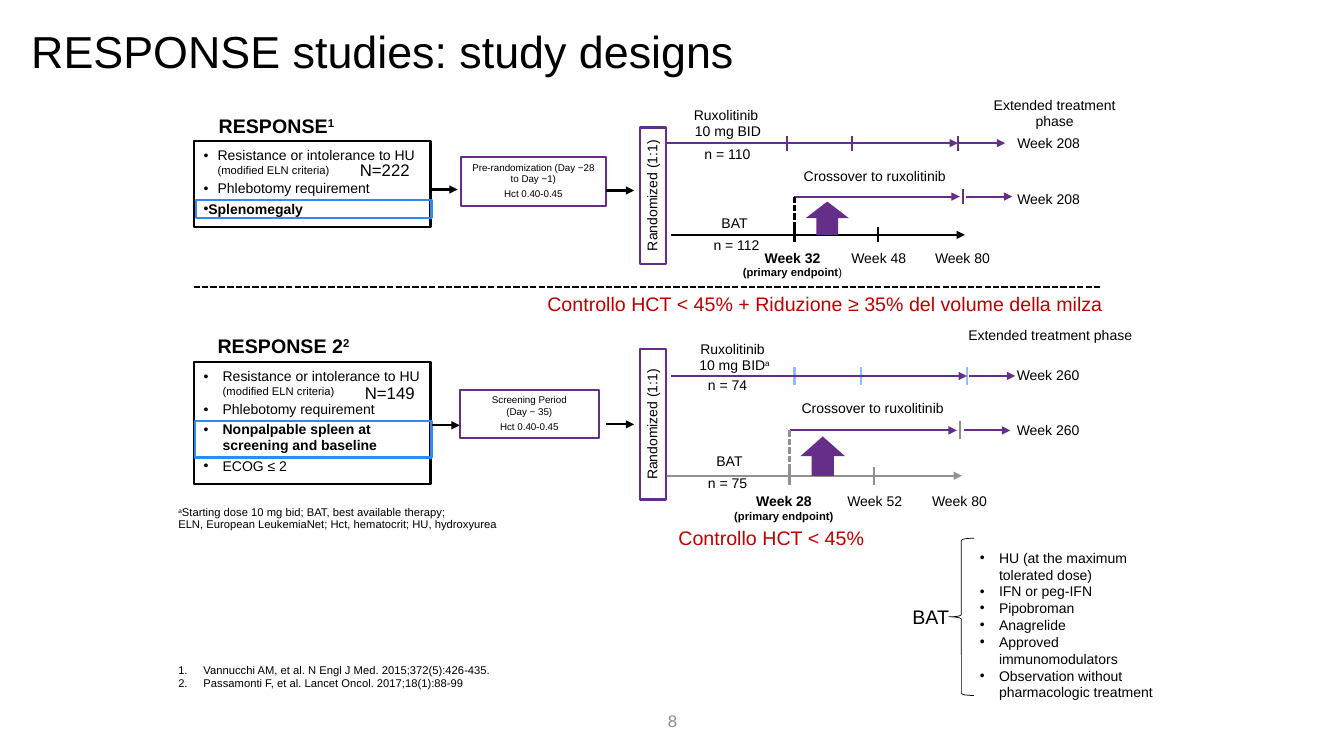
from dataclasses import dataclass, field
from lxml.etree import SubElement
from pptx import Presentation
from pptx.dml.color import RGBColor
from pptx.enum.dml import MSO_LINE
from pptx.enum.shapes import MSO_CONNECTOR, MSO_SHAPE
from pptx.enum.text import MSO_ANCHOR, MSO_AUTO_SIZE, PP_ALIGN
from pptx.oxml.ns import qn
from pptx.util import Inches, Pt

TITLE = "RESPONSE studies: study designs"
PAGE = "8"

RESPONSE = dict(
    heading=[("RESPONSE", "heading"), ("1", "heading_sup")], heading_at=(20.7, 10.8),
    criteria=[
        [("Resistance or intolerance to HU ", "label"), ("(modified ELN criteria)", "small")],
        [("Phlebotomy requirement", "label")],
        [("Splenomegaly", "strong")],
    ],
    criteria_box=(19.2, 14, 23.5, 8.5), margins=[0.14, 0.14, 0], hanging=0.14,
    highlight=(19.4, 19.8, 23.4, 1.8),
    enrolled="N=222", enrolled_at=(34.7, 15.4),
    screening=["Pre-randomization (Day −28 to Day −1)", "Hct 0.40-0.45"],
    screening_box=(45.7, 15.6, 14.4, 4.8),
    steps=[(42.7, 45.4, 18.8), (60.1, 62.9, 18.9)],
    randomized=(64.75, 19.4, 13.5),
    tick=0.75,
    tracks=[
        dict(row=14.2, span=(65.9, 95), ink="purple", ticks=[78.1, 84.5, 95], tick_ink="purple", extension=(95.1, 99.7)),
        dict(row=19.5, span=(78.8, 95.2), ink="purple", ticks=[95.5], tick_ink="purple", extension=(95.8, 100.4)),
        dict(row=23.3, span=(66.6, 95.7), ink="black", ticks=[78.8, 87.1], tick_ink="black"),
    ],
    drop=(78.8, 19.5, 22.5), drop_ink="black",
    crossover=(79.9, 20, 4.3, 3.3),
    labels=[
        ([("Ruxolitinib \n10 mg BID", "label")], (65.9, 10.2, 12.6)),
        ([("n = 110", "label")], (68.8, 14.1, 6.7)),
        ([("Extended treatment phase", "label")], (95.6, 9.2, 18)),
        ([("Week 208", "label")], (99.2, 13, 9.6)),
        ([("Crossover to ruxolitinib", "label")], (76.2, 16.3, 21.1)),
        ([("Week 208", "label")], (99.2, 18.5, 9.6)),
        ([("BAT", "label")], (65, 20.9, 15.7)),
        ([("n = 112", "label")], (69.7, 23.1, 6.7)),
        ([("Week 48", "label")], (83.4, 24.4, 7.5)),
        ([("Week 80", "label")], (91.7, 24.4, 7.5)),
    ],
    endpoint=[("Week 32\n", "strong"), ("(primary endpoint", "small_strong"), (")", "small")],
    endpoint_at=(67.5, 24.5, 22.2, 3.7), endpoint_spacing=0.9,
    finding="Controllo HCT < 45% + Riduzione ≥ 35% del volume della milza",
    finding_at=(53.3, 28.5, 59.1),
)
RESPONSE_2 = dict(
    heading=[("RESPONSE 2", "heading"), ("2", "heading_sup")], heading_at=(20.6, 32.6),
    criteria=[
        [("Resistance or intolerance to HU ", "label"), ("(modified ELN criteria)", "small")],
        [("Phlebotomy requirement", "label")],
        [("Nonpalpable spleen at screening and baseline", "strong")],
        [("ECOG ≤ 2", "label")],
    ],
    criteria_box=(19.2, 35.9, 23.5, 12.1), margins=[0.19] * 4, hanging=0.19,
    highlight=(19.3, 41.8, 23.5, 3.6),
    enrolled="N=149", enrolled_at=(35.2, 37.5),
    screening=["Screening Period\n(Day − 35)", "Hct 0.40-0.45"],
    screening_box=(45.6, 38.7, 13.8, 4.8),
    steps=[(42.8, 45.6, 42.2), (60.1, 62.9, 42.1)],
    randomized=(64.75, 42.1, 14.9),
    tick=0.9,
    tracks=[
        dict(row=37.3, span=(66.6, 95.9), ink="purple", ticks=[78.8, 85.4, 95.9], tick_ink="sky", extension=(96.1, 100.7)),
        dict(row=42.7, span=(78.4, 94.9), ink="purple", ticks=[95.2], tick_ink="grey", extension=(95.6, 100.2)),
        dict(row=47.2, span=(66, 95.4), ink="grey", ticks=[78.3, 86.7], tick_ink="grey"),
    ],
    drop=(78.3, 42.7, 46.3), drop_ink="grey",
    crossover=(79.4, 43.3, 4.4, 3.9),
    labels=[
        ([("Ruxolitinib \n10 mg BID", "label"), ("a", "label_sup")], (66.5, 33.4, 12.7)),
        ([("n = 74", "label")], (69.2, 37, 5.9)),
        ([("Extended treatment phase", "label")], (94.9, 32, 18.5)),
        ([("Week 260", "label")], (99.1, 36, 9.7)),
        ([("Crossover to ruxolitinib", "label")], (75.9, 39.3, 21.3)),
        ([("Week 260", "label")], (99.1, 41.4, 9.7)),
        ([("BAT", "label")], (64.4, 44.5, 15.9)),
        ([("n = 75", "label")], (69.2, 46.7, 5.9)),
        ([("Week 52", "label")], (83, 48.5, 7.5)),
        ([("Week 80", "label")], (91.4, 48.5, 7.5)),
    ],
    endpoint=[("Week 28\n", "strong"), ("(primary endpoint)", "small_strong")],
    endpoint_at=(66.5, 48.4, 22.5, 4), endpoint_spacing=1,
    finding="Controllo HCT < 45%", finding_at=(66.3, 51.7, 25.6),
)
FOOTNOTE = [
    ("a", "small_sup"),
    ("Starting dose 10 mg bid; BAT, best available therapy; \nELN, European LeukemiaNet; Hct, hematocrit; HU, hydroxyurea", "small"),
]
THERAPIES = [
    "HU (at the maximum tolerated dose)", "IFN or peg-IFN", "Pipobroman", "Anagrelide",
    "Approved immunomodulators", "Observation without pharmacologic treatment",
]
REFERENCES = [
    "Vannucchi AM, et al. N Engl J Med. 2015;372(5):426-435.",
    "Passamonti F, et al. Lancet Oncol. 2017;18(1):88-99",
]


@dataclass
class Theme:
    font: str = "Arial"
    stroke: float = 1.5
    inks: dict = field(default_factory=lambda: dict(
        black="000000", white="FFFFFF", purple="652E88", grey="919191", sky="8BBEFA",
        blue="2E8AF6", red="C00000", page="8C8C8C"))
    roles: dict = field(default_factory=lambda: dict(
        title=(32, False, "black"), heading=(14, True, "black"), heading_sup=(14, True, "black"),
        finding=(14, False, "red"), group=(14, False, "black"), count=(12, False, "black"),
        page=(12, False, "page"), label=(10, False, "black"), label_sup=(10, False, "black"),
        strong=(10, True, "black"), small=(8, False, "black"), small_sup=(8, False, "black"),
        small_strong=(8, True, "black"), tiny=(7, False, "black")))

    def color(self, ink):
        return RGBColor.from_string(self.inks[ink])


theme = Theme()
deck = Presentation()
deck.slide_width, deck.slide_height = Inches(13.33), Inches(7.5)
slide = deck.slides.add_slide(deck.slide_layouts[5])


def cells(*counts):
    return [Inches(count / 10) for count in counts]


def bullet(paragraph, margin, hanging, numbered=False):
    props = paragraph._p.get_or_add_pPr()
    props.set("marL", str(Inches(margin)))
    props.set("indent", str(-Inches(hanging)))
    tint = SubElement(props, qn("a:buClr"))
    SubElement(tint, qn("a:srgbClr"), val=theme.inks["black"])
    SubElement(props, qn("a:buFont"), typeface=theme.font)
    if numbered:
        SubElement(props, qn("a:buAutoNum"), type="arabicPeriod")
    else:
        SubElement(props, qn("a:buChar"), char="•")


def write(frame, paragraphs, align=PP_ALIGN.LEFT, spacing=1, after=0, margins=None, hanging=0,
          numbered=False, anchor=MSO_ANCHOR.TOP, wrap=True):
    frame.word_wrap, frame.vertical_anchor, frame.auto_size = wrap, anchor, MSO_AUTO_SIZE.NONE
    for index, runs in enumerate(paragraphs):
        paragraph = frame.add_paragraph() if index else frame.paragraphs[0]
        if margins:
            bullet(paragraph, margins[index], hanging, numbered)
        paragraph.alignment, paragraph.line_spacing = align, spacing
        paragraph.space_after = Pt(after)
        for text, role in runs:
            size, bold, ink = theme.roles[role]
            for part, words in enumerate(text.split("\n")):
                if part:
                    paragraph.add_line_break()
                if words:
                    run = paragraph.add_run()
                    run.text = words
                    run.font.name, run.font.size, run.font.bold = theme.font, Pt(size), bold
                    run.font.color.rgb = theme.color(ink)
                    if role.endswith("_sup"):
                        run._r.get_or_add_rPr().set("baseline", "30000")


def note(box, paragraphs, **layout):
    write(slide.shapes.add_textbox(*cells(*box)).text_frame, paragraphs, **layout)


def block(box, preset=MSO_SHAPE.RECTANGLE, fill=None, line=None, width=theme.stroke):
    shape = slide.shapes.add_shape(preset, *cells(*box))
    shape.shadow.inherit = False
    for paint, ink in ((shape.fill, fill), (shape.line.fill, line)):
        if ink:
            paint.solid()
            paint.fore_color.rgb = theme.color(ink)
        else:
            paint.background()
    if line:
        shape.line.width = Pt(width)
    return shape


def rule(x1, y1, x2, y2, ink="black", arrow=False, dashed=False):
    link = slide.shapes.add_connector(MSO_CONNECTOR.STRAIGHT, *cells(x1, y1, x2, y2))
    link.line.color.rgb, link.line.width = theme.color(ink), Pt(theme.stroke)
    if dashed:
        link.line.dash_style = MSO_LINE.SQUARE_DOT
    if arrow:
        SubElement(link.line._get_or_add_ln(), qn("a:tailEnd"), type="triangle")
    SubElement(link._element.spPr, qn("a:effectLst"))


def draw_study(study):
    centred = dict(align=PP_ALIGN.CENTER, spacing=0.95, after=3)
    note((*study["heading_at"], 18, 3.4), [study["heading"]])
    criteria = block(study["criteria_box"], fill="white", line="black").text_frame
    criteria.margin_top = criteria.margin_bottom = Inches(0.07)
    write(criteria, study["criteria"], spacing=0.95, after=3, margins=study["margins"], hanging=study["hanging"])
    block(study["highlight"], line="blue")
    note((*study["enrolled_at"], 10.1, 3), [[(study["enrolled"], "count")]])
    screening = block(study["screening_box"], fill="white", line="purple")
    write(screening.text_frame, [[(text, "tiny")] for text in study["screening"]], **centred)
    for start, end, row in study["steps"]:
        rule(start, row, end, row, arrow=True)

    for track in study["tracks"]:
        row, ink = track["row"], track["ink"]
        for x in track["ticks"]:
            rule(x, row - study["tick"], x, row + study["tick"], track["tick_ink"])
        for start, end in filter(None, (track["span"], track.get("extension"))):
            rule(start, row, end, row, ink, arrow=True)
    x, top, bottom = study["drop"]
    rule(x, top, x, bottom, study["drop_ink"], dashed=True)
    block(study["crossover"], MSO_SHAPE.UP_ARROW, fill="purple")

    x, y, length = study["randomized"]
    randomized = block((x - length / 2, y - 1.3, length, 2.6), fill="white", line="purple")
    randomized.rotation = 270
    write(randomized.text_frame, [[("Randomized (1:1)", "label")]], **centred)
    for runs, (left, top, width) in study["labels"]:
        note((left, top, width, 2.6), [runs], wrap=width > 8, **centred)
    note(study["endpoint_at"], [study["endpoint"]], align=PP_ALIGN.CENTER, spacing=study["endpoint_spacing"], after=3)
    note((*study["finding_at"], 3.4), [[(study["finding"], "finding")]])


title = slide.shapes.title
title.left, title.top, title.width, title.height = cells(2.1, 1.7, 95.8, 7.4)
write(title.text_frame, [[(TITLE, "title")]], spacing=0.9, anchor=MSO_ANCHOR.MIDDLE)
for study in (RESPONSE, RESPONSE_2):
    draw_study(study)
rule(19.2, 28.5, 109.3, 28.5, dashed=True)
note((16.7, 49.8, 76.6, 3.4), [FOOTNOTE], spacing=0.9)
note((89.5, 59.5, 9.5, 3.4), [[("BAT", "group")]])
block((94.1, 53.4, 2.5, 15.6), MSO_SHAPE.LEFT_BRACE, line="black", width=0.5)
note((96.2, 54, 20.5, 16.2), [[(text, "label")] for text in THERAPIES],
     margins=[0.19] * len(THERAPIES), hanging=0.19)
note((16.7, 65.3, 100, 3.7), [[(text, "small")] for text in REFERENCES],
     margins=[0.25] * len(REFERENCES), hanging=0.25, numbered=True)
note((44.2, 69.5, 45, 4), [[(PAGE, "page")]], align=PP_ALIGN.CENTER, anchor=MSO_ANCHOR.MIDDLE)
deck.save("out.pptx")
